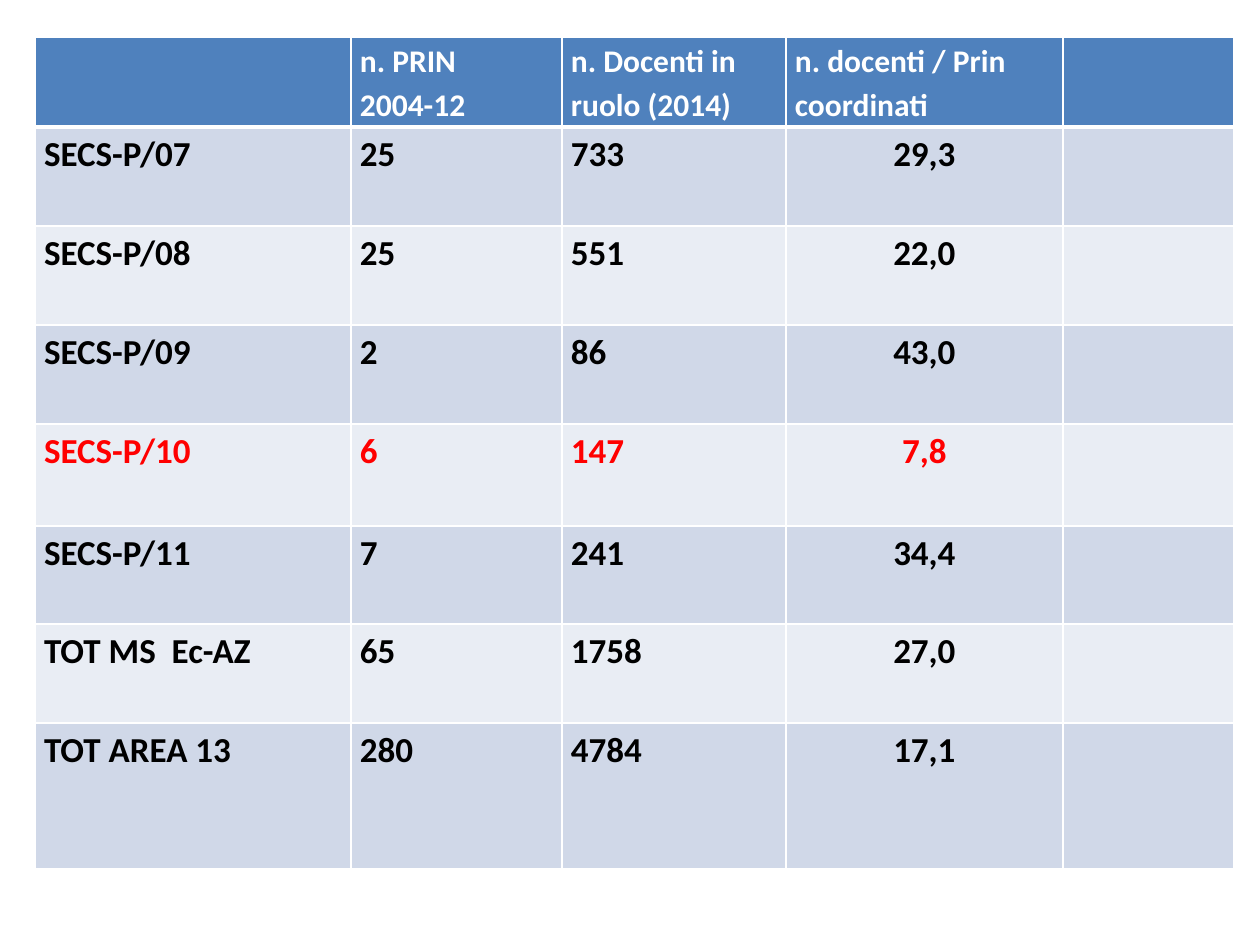
from lxml import etree
from pptx import Presentation
from pptx import util as u
from pptx.dml.color import RGBColor
from pptx.enum import text
from pptx.oxml.ns import qn

PX = 914400 / 126
WHITE = RGBColor(0xFF, 0xFF, 0xFF)
BLACK = RGBColor(0x00, 0x00, 0x00)
RED = RGBColor(0xFF, 0x00, 0x00)
HEADER = RGBColor(0x4F, 0x81, 0xBD)
BANDS = (RGBColor(0xD0, 0xD8, 0xE8), RGBColor(0xE9, 0xED, 0xF4))

COLUMNS = (316, 211, 224, 277, 171)
HEIGHTS = (90, 99, 99, 99, 102, 98, 99, 146)
ROWS = (
    ("", "n. PRIN\n2004-12", "n. Docenti in ruolo (2014)",
     "n. docenti / Prin  coordinati", ""),
    ("SECS-P/07", "25", "733", "29,3", ""),
    ("SECS-P/08", "25", "551", "22,0", ""),
    ("SECS-P/09", "2", "86", "43,0", ""),
    ("SECS-P/10", "6", "147", "7,8", ""),
    ("SECS-P/11", "7", "241", "34,4", ""),
    ("TOT MS  Ec-AZ", "65", "1758", "27,0", ""),
    ("TOT AREA 13", "280", "4784", "17,1", ""),
)
HIGHLIGHTED = "SECS-P/10"
RATIO_COLUMN = 3


def px(n):
    return u.Emu(round(n * PX))


def write(tf, content, size=20, color=BLACK, align=text.PP_ALIGN.LEFT, font="Calibri"):
    for i, line in enumerate(content.split("\n")):
        p = tf.paragraphs[0] if i == 0 else tf.add_paragraph()
        p.alignment = align
        p.line_spacing = 1.15
        r = p.add_run()
        r.text = line
        r.font.name = font
        r.font.size = u.Pt(size)
        r.font.bold = True
        r.font.color.rgb = color


class Deck:
    def __init__(self, width, height):
        self.prs = Presentation()
        self.prs.slide_width, self.prs.slide_height = px(width), px(height)
        self.s = self.prs.slides.add_slide(self.prs.slide_layouts[6])

    def borders(self, cell, **widths):
        tc_pr = cell._tc.get_or_add_tcPr()
        for side in "LRTB":
            ln = etree.SubElement(tc_pr, qn(f"a:ln{side}"), w=str(u.Pt(widths.get(side, 1))))
            fill = etree.SubElement(ln, qn("a:solidFill"))
            etree.SubElement(fill, qn("a:srgbClr"), val=str(WHITE))

    def cell(self, cell, content, fill, borders, **style):
        self.borders(cell, **borders)
        cell.fill.solid()
        cell.fill.fore_color.rgb = fill
        cell.margin_left = cell.margin_right = px(9)
        cell.margin_top = cell.margin_bottom = 0
        if content:
            write(cell.text_frame, content, **style)

    def table(self, left, top, columns, heights, rows):
        sp = self.s.shapes.add_table(len(rows), len(columns), px(left), px(top),
                                     px(sum(columns)), px(sum(heights)))
        table = sp.table
        for column, width in zip(table.columns, columns):
            column.width = px(width)
        for i, (values, height) in enumerate(zip(rows, heights)):
            table.rows[i].height = px(height)
            if i == 0:
                fill, style, borders = HEADER, dict(size=18, color=WHITE), dict(B=3)
            else:
                fill = BANDS[(i - 1) % 2]
                style = dict(color=RED if values[0] == HIGHLIGHTED else BLACK)
                borders = dict(T=3) if i == 1 else {}
            for j, value in enumerate(values):
                centered = i > 0 and j == RATIO_COLUMN
                align = text.PP_ALIGN.CENTER if centered else text.PP_ALIGN.LEFT
                self.cell(table.cell(i, j), value, fill, borders, align=align, **style)


def main():
    deck = Deck(1260, 945)
    deck.table(35, 37, COLUMNS, HEIGHTS, ROWS)
    deck.prs.save("out.pptx")


if __name__ == "__main__":
    main()
